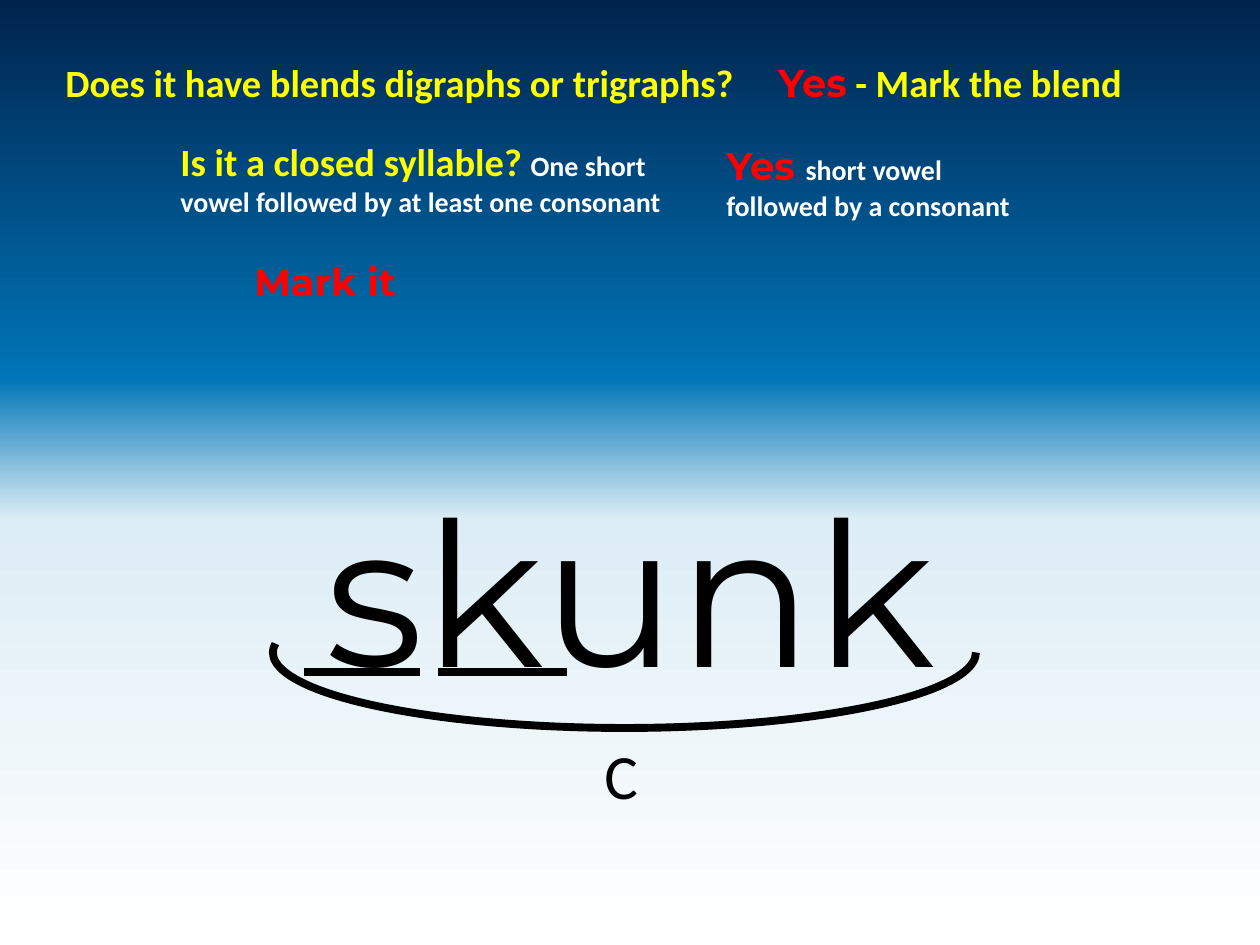
"""Build the slide that marks the word skunk as a closed syllable."""
from copy import deepcopy
from lxml.etree import SubElement
from pptx import Presentation
from pptx.dml.color import RGBColor
from pptx.enum.shapes import MSO_CONNECTOR, MSO_SHAPE
from pptx.enum.text import MSO_ANCHOR, MSO_AUTO_SIZE, PP_ALIGN
from pptx.oxml.ns import qn
from pptx.util import Emu, Pt

BLACK = RGBColor(0, 0, 0)
WHITE = RGBColor(0xFF, 0xFF, 0xFF)
YELLOW = RGBColor(0xFF, 0xFF, 0)
RED = RGBColor(0xFF, 0, 0)
PALE = RGBColor(0xDD, 0xED, 0xF5)
BLUE = RGBColor(0, 0x75, 0xB7)
NAVY = RGBColor(0, 0x23, 0x4D)
SANS, ROUND = "Calibri", "Montserrat"


def px(*nums):
    return [Emu(round(num * 914400 / 126)) for num in nums]


def add_text(shapes, spot, parts, bold=True):
    frame = shapes.add_textbox(*px(*spot)).text_frame
    frame.word_wrap = False
    frame.auto_size = MSO_AUTO_SIZE.SHAPE_TO_FIT_TEXT
    para = frame.paragraphs[0]
    for text, size, face, color in parts:
        for row, line in enumerate(text.split("\n")):
            if row:
                para.add_line_break()
            run = para.add_run()
            run.text = line
            run.font.size, run.font.name, run.font.bold = Pt(size), face, bold
            run.font.color.rgb = color


deck = Presentation()
deck.slide_width, deck.slide_height = px(1260, 945)
slide = deck.slides.add_slide(deck.slide_layouts[5])

fill = slide.background.fill
fill.gradient()
fill.gradient_angle = 90
stops = slide.background._cSld.xpath(".//a:gsLst")[0]
for _ in range(2):
    stops.append(deepcopy(stops[0]))
shades = [(0, WHITE), (0.45, PALE), (0.6, BLUE), (1, NAVY)]
for stop, (place, color) in zip(fill.gradient_stops, shades):
    stop.position = place
    stop.color.rgb = color

title = slide.shapes.title
title.left, title.top, title.width, title.height = px(63, 325, 1134, 525)
frame = title.text_frame
frame.text = "skunk"
frame.auto_size = MSO_AUTO_SIZE.NONE
frame.vertical_anchor = MSO_ANCHOR.MIDDLE
para = frame.paragraphs[0]
para.alignment = PP_ALIGN.CENTER
font = para.runs[0].font
font.size, font.name = Pt(115), ROUND
font.color.rgb = BLACK

notes = [
    ((53, 53, 702, 59), [("Does it have blends digraphs or trigraphs?", 22, SANS, YELLOW)]),
    ((766, 53, 381, 59), [("Yes", 22, ROUND, RED), (" - Mark the blend", 22, SANS, YELLOW)]),
    ((168, 132, 512, 93), [
        ("Is it a closed syllable? ", 22, SANS, YELLOW),
        ("One short \nvowel followed by at least one consonant", 16, SANS, WHITE)]),
    ((714, 136, 312, 93), [
        ("Yes ", 22, ROUND, RED),
        ("short vowel \nfollowed by a consonant", 16, SANS, WHITE)]),
    ((242, 252, 189, 59), [("Mark it", 22, ROUND, RED)]),
]
for spot, parts in notes:
    add_text(slide.shapes, spot, parts)

group = slide.shapes.add_group_shape().shapes
arc = group.add_shape(MSO_SHAPE.ARC, *px(273, 577, 703, 151))
arc.adjustments[0], arc.adjustments[1] = 107.122, 0
arc._element.spPr.find(qn("a:xfrm")).set("flipV", "1")
arc.shadow.inherit = False
arc.fill.background()
arc.line.color.rgb = BLACK
arc.line.width = Pt(4.5)
add_text(group, (592, 730, 84, 89), [("C", 36, SANS, BLACK)], bold=False)

group = slide.shapes.add_group_shape().shapes
for left, right in [(304, 420), (438, 567)]:
    bar = group.add_connector(MSO_CONNECTOR.STRAIGHT, *px(left, 672, right, 672))
    bar.line.color.rgb = BLACK
    bar.line.width = Pt(4.5)
    SubElement(bar._element.spPr, qn("a:effectLst"))

deck.save("out.pptx")
